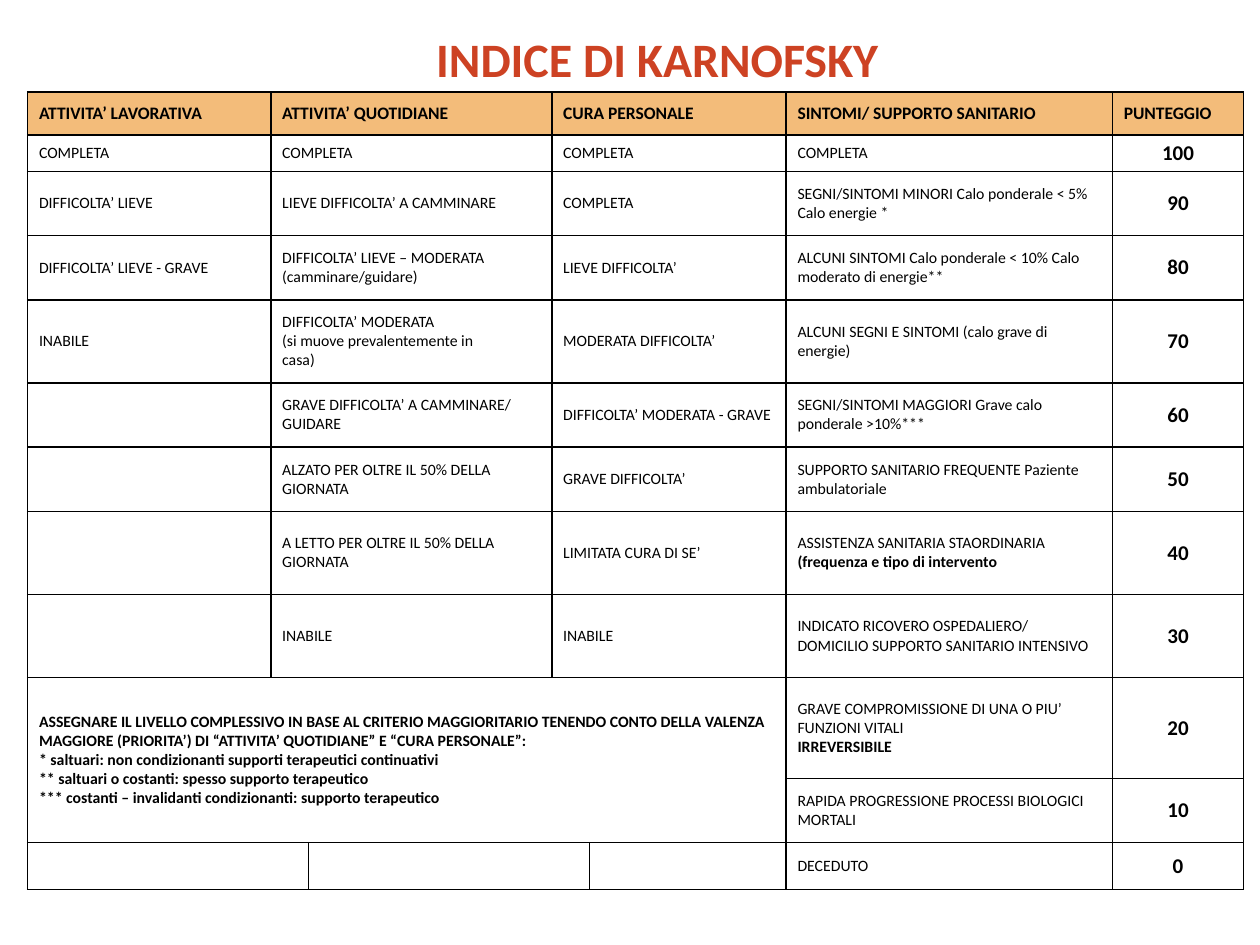
from lxml import etree
from pptx import Presentation
from pptx.dml.color import RGBColor
from pptx.enum.text import MSO_ANCHOR, PP_ALIGN
from pptx.oxml import parse_xml
from pptx.oxml.ns import qn
from pptx.util import Inches, Pt

MIDDLE = MSO_ANCHOR.MIDDLE
LEFT, CENTER = PP_ALIGN.LEFT, PP_ALIGN.CENTER
BLACK, WHITE, ORANGE, RED = "000000", "FFFFFF", "F3BC7A", "CD4223"
DRAWING_NS = "http://schemas.openxmlformats.org/drawingml/2006/main"


def write(frame, text, size=9, color=BLACK, bold=False, align=LEFT):
    """Newline: new paragraph; \\v: line break; |: bold from here to the paragraph end."""
    for number, line in enumerate(text.split("\n")):
        paragraph = frame.add_paragraph() if number else frame.paragraphs[0]
        paragraph.alignment = align
        for part, piece in enumerate(line.split("|")):
            for row, words in enumerate(piece.split("\v")):
                if row:
                    paragraph.add_line_break()
                if words:
                    run = paragraph.add_run()
                    run.text = words
                    run.font.name = "Calibri"
                    run.font.size = Pt(size)
                    run.font.bold = bold or part > 0
                    run.font.color.rgb = RGBColor.from_string(color)


def format_cell(cell, fill):
    cell.vertical_anchor = MIDDLE
    cell.margin_left = cell.margin_right = Inches(0.09)
    cell.margin_top = cell.margin_bottom = Inches(0.04)
    properties = cell._tc.get_or_add_tcPr()
    for side in ("lnL", "lnR", "lnT", "lnB"):
        properties.append(parse_xml(
            f'<a:{side} xmlns:a="{DRAWING_NS}" w="12700"><a:solidFill>'
            f'<a:srgbClr val="{BLACK}"/></a:solidFill></a:{side}>'))
    cell.fill.solid()
    cell.fill.fore_color.rgb = RGBColor.from_string(fill)
    # Keep empty cells from stretching their row
    if not cell.text_frame.text:
        etree.SubElement(cell.text_frame.paragraphs[0]._p, qn("a:endParaRPr"), sz="900")


headings = ["ATTIVITA’ LAVORATIVA", "ATTIVITA’ QUOTIDIANE", "CURA PERSONALE",
            "SINTOMI/ SUPPORTO SANITARIO", "PUNTEGGIO"]
# Work, daily activities, personal care, symptoms; the scores fall from 100 by tens
levels = [
    ["COMPLETA"] * 4,
    ["DIFFICOLTA’ LIEVE", "LIEVE DIFFICOLTA’ A CAMMINARE", "COMPLETA",
     "SEGNI/SINTOMI MINORI Calo ponderale < 5% Calo energie *"],
    ["DIFFICOLTA’ LIEVE - GRAVE", "DIFFICOLTA’ LIEVE – MODERATA (camminare/guidare)",
     "LIEVE DIFFICOLTA’", "ALCUNI SINTOMI Calo ponderale < 10% Calo moderato di energie**"],
    ["INABILE", "DIFFICOLTA’ MODERATA\v(si muove prevalentemente in\ncasa)",
     "MODERATA DIFFICOLTA’", "ALCUNI SEGNI E SINTOMI (calo grave di energie)"],
    ["", "GRAVE DIFFICOLTA’ A CAMMINARE/ GUIDARE", "DIFFICOLTA’ MODERATA - GRAVE",
     "SEGNI/SINTOMI MAGGIORI Grave calo ponderale >10%***"],
    ["", "ALZATO PER OLTRE IL 50% DELLA GIORNATA", "GRAVE DIFFICOLTA’",
     "SUPPORTO SANITARIO FREQUENTE Paziente ambulatoriale"],
    ["", "A LETTO PER OLTRE IL 50% DELLA GIORNATA", "LIMITATA CURA DI SE’",
     "ASSISTENZA SANITARIA STAORDINARIA |(frequenza e tipo di intervento"],
    ["", "INABILE", "INABILE",
     "INDICATO RICOVERO OSPEDALIERO/ DOMICILIO SUPPORTO SANITARIO INTENSIVO"],
    ["", "", "", "GRAVE COMPROMISSIONE DI UNA O PIU’ FUNZIONI VITALI\n|IRREVERSIBILE"],
    ["", "", "", "RAPIDA PROGRESSIONE PROCESSI BIOLOGICI MORTALI"],
    ["", "", "", "DECEDUTO"],
]
criteria = (
    "ASSEGNARE IL LIVELLO COMPLESSIVO IN BASE AL CRITERIO MAGGIORITARIO TENENDO CONTO "
    "DELLA VALENZA MAGGIORE (PRIORITA’) DI “ATTIVITA’ QUOTIDIANE” E “CURA PERSONALE”:\n"
    "* saltuari: non condizionanti supporti terapeutici continuativi\n"
    "** saltuari o costanti: spesso supporto terapeutico\v"
    "*** costanti – invalidanti condizionanti: supporto terapeutico")
column_widths = [1.93, 0.3, 1.93, 0.3, 1.56, 2.59, 1.04]
row_heights = [0.34, 0.29, 0.51, 0.51, 0.66, 0.51, 0.51, 0.66, 0.66, 0.8, 0.51, 0.37]
text_columns = [0, 1, 3, 5]
score_column = 6
criteria_row, last_row = 9, 11

deck = Presentation()
deck.slide_width, deck.slide_height = Inches(10), Inches(7.5)
slide = deck.slides.add_slide(deck.slide_layouts[5])

# Title
title = slide.shapes.title
title.left, title.top = Inches(2.78), Inches(0.18)
title.width, title.height = Inches(5.05), Inches(0.56)
title.text_frame.vertical_anchor = MIDDLE
title.text_frame.margin_right = Inches(0.28)
write(title.text_frame, "INDICE DI KARNOFSKY", size=27.4, color=RED, bold=True, align=CENTER)

# Table grid
table = slide.shapes.add_table(
    len(row_heights), len(column_widths), Inches(0.22), Inches(0.73),
    Inches(sum(column_widths)), Inches(sum(row_heights))).table
table.first_row = table.horz_banding = False
for column, width in zip(table.columns, column_widths):
    column.width = Inches(width)
for row, height in zip(table.rows, row_heights):
    row.height = Inches(height)

# Merged cells
for r in range(criteria_row):
    for c in (1, 3):
        table.cell(r, c).merge(table.cell(r, c + 1))
table.cell(criteria_row, 0).merge(table.cell(criteria_row + 1, 4))
for c in (0, 2):
    table.cell(last_row, c).merge(table.cell(last_row, c + 1))

# Headings, levels with their scores, and the criteria
for c, heading in zip(text_columns + [score_column], headings):
    write(table.cell(0, c).text_frame, heading, size=10, bold=True)
for r, level in enumerate(levels, start=1):
    for c, description in zip(text_columns, level):
        if description:
            write(table.cell(r, c).text_frame, description)
    write(table.cell(r, score_column).text_frame, str(110 - 10 * r),
          size=12, bold=True, align=CENTER)
write(table.cell(criteria_row, 0).text_frame, criteria, bold=True)

# Fills and borders
for r in range(len(row_heights)):
    for c in range(len(column_widths)):
        format_cell(table.cell(r, c), WHITE if r else ORANGE)

deck.save("out.pptx")
